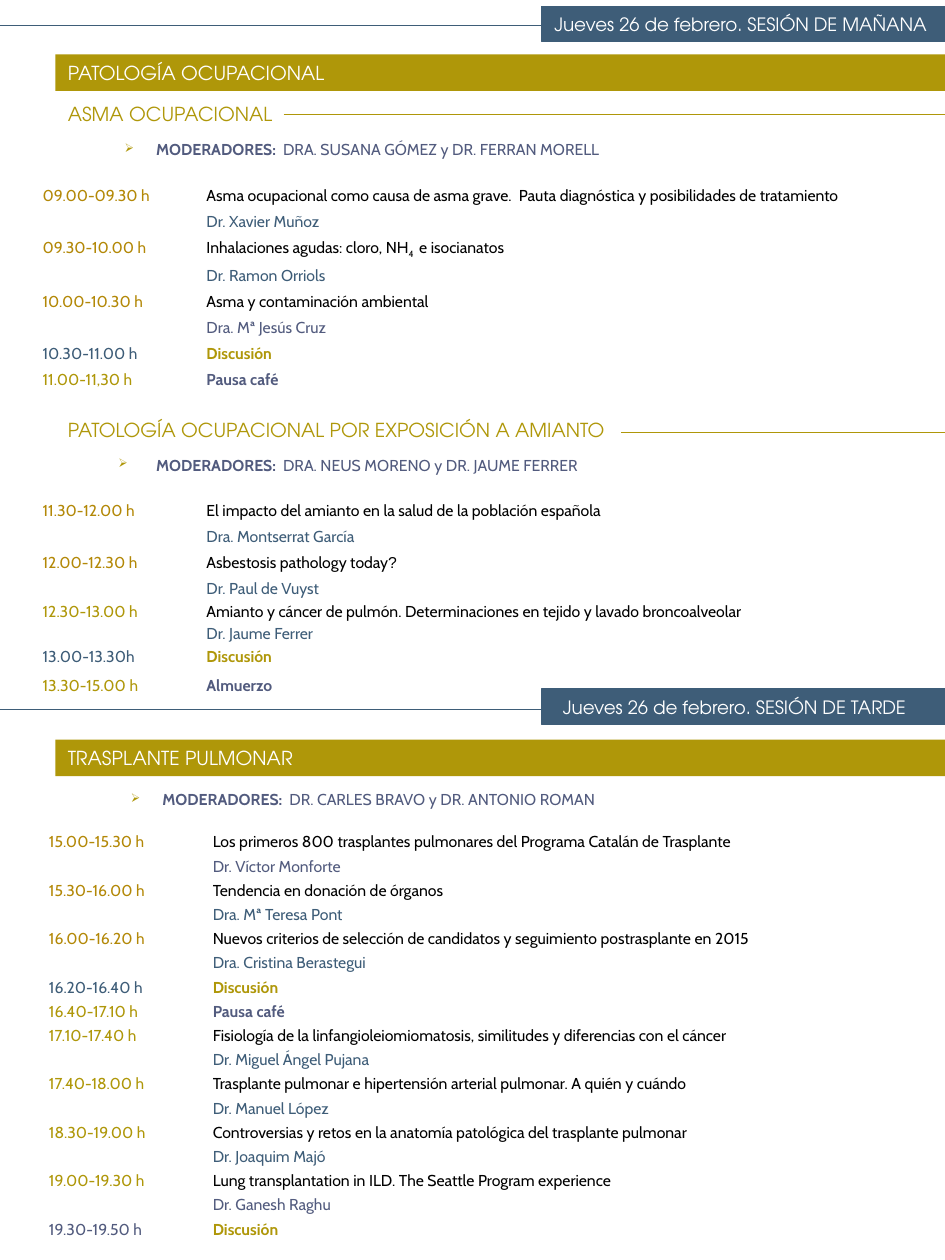
"""Build the conference programme page with its morning and afternoon sessions."""
from lxml.etree import SubElement
from pptx import Presentation
from pptx.dml.color import RGBColor
from pptx.enum.shapes import MSO_CONNECTOR, MSO_SHAPE
from pptx.enum.text import MSO_ANCHOR, PP_ALIGN
from pptx.oxml.ns import qn
from pptx.util import Pt

COLORS = {"olive": "AF9709", "gold": "B38807", "blue": "3E5D78",
          "violet": "525B7E", "black": "000000", "white": "FFFFFF"}
TITLE_FONT = "TeX Gyre Adventor"
BODY_FONT = "Cabin"


def add_run(paragraph, text, color="black", font=BODY_FONT, size=9, bold=False, baseline=0):
    run = paragraph.add_run()
    run.text = text
    run.font.name = font
    run.font.size = Pt(size)
    run.font.bold = bold
    run.font.color.rgb = RGBColor.from_string(COLORS[color])
    if baseline:
        run.font._element.set("baseline", str(baseline * 1000))


presentation = Presentation()
presentation.slide_width, presentation.slide_height = Pt(540), Pt(720)
slide = presentation.slides.add_slide(presentation.slide_layouts[6])

rules = [(0, 315.4, 14.4, "blue"), (0, 313.2, 405.4, "blue"),
         (162, 540, 65.5, "olive"), (355, 540, 247, "olive")]
for start, end, top, color in rules:
    line = slide.shapes.add_connector(MSO_CONNECTOR.STRAIGHT, Pt(start), Pt(top), Pt(end), Pt(top))
    line.line.color.rgb = RGBColor.from_string(COLORS[color])
    line.line.width = Pt(0.75)
    SubElement(line._element.spPr, qn("a:effectLst"))

session_bars = [("Jueves 26 de febrero. SESIÓN DE MAÑANA", 3.6, 10.2),
                ("Jueves 26 de febrero. SESIÓN DE TARDE", 393.8, 22.2)]
for text, top, right_margin in session_bars:
    shape = slide.shapes.add_shape(MSO_SHAPE.RECTANGLE, Pt(309.6), Pt(top), Pt(230.4), Pt(20.2))
    shape.shadow.inherit = False
    shape.fill.solid()
    shape.fill.fore_color.rgb = RGBColor.from_string(COLORS["blue"])
    shape.line.color.rgb = RGBColor.from_string(COLORS["blue"])
    shape.line.width = Pt(0.75)
    shape.text_frame.margin_right = Pt(right_margin)
    paragraph = shape.text_frame.paragraphs[0]
    paragraph.alignment = PP_ALIGN.RIGHT
    add_run(paragraph, text, color="white", font=TITLE_FONT, size=10.5)

headings = [("PATOLOGÍA OCUPACIONAL", 31, True),
            ("ASMA OCUPACIONAL", 54.7, False),
            ("PATOLOGÍA OCUPACIONAL POR EXPOSICIÓN A AMIANTO", 235.4, False),
            ("TRASPLANTE PULMONAR", 422.6, True)]
for text, top, filled in headings:
    width = 508.3 if filled else 493.2
    shape = slide.shapes.add_shape(MSO_SHAPE.RECTANGLE, Pt(31.7), Pt(top), Pt(width), Pt(20.9))
    shape.shadow.inherit = False
    shape.line.fill.background()
    if filled:
        shape.fill.solid()
        shape.fill.fore_color.rgb = RGBColor.from_string(COLORS["olive"])
    else:
        shape.fill.background()
    paragraph = shape.text_frame.paragraphs[0]
    paragraph.alignment = PP_ALIGN.LEFT
    add_run(paragraph, text, color="white" if filled else "olive", font=TITLE_FONT, size=11)

# Rows: time, time color, text (odd parts between bars are subscripts), text color, space before
BREAKS = ("Discusión", "Pausa café", "Almuerzo")
MODERATORS = "MODERADORES:  "
morning = [
    (MODERATORS, 18, "DRA. SUSANA GÓMEZ y DR. FERRAN MORELL", "violet", 4),
    ("09.00-09.30 h", "gold", "Asma ocupacional como causa de asma grave.  Pauta diagnóstica y posibilidades de tratamiento", "black", 15.3),
    ("", "blue", "Dr. Xavier Muñoz", "blue", 4),
    ("09.30-10.00 h", "gold", "Inhalaciones agudas: cloro, NH|4 | e isocianatos", "black", 4),
    ("", "blue", "Dr. Ramon Orriols", "blue", 4),
    ("10.00-10.30 h", "gold", "Asma y contaminación ambiental", "black", 4),
    ("", "blue", "Dra. Mª Jesús Cruz", "violet", 4),
    ("10.30-11.00 h", "blue", "Discusión", "olive", 4),
    ("11.00-11,30 h", "olive", "Pausa café", "violet", 4),
    (MODERATORS, 21.6, "DRA. NEUS MORENO y DR. JAUME FERRER", "violet", 38.2),
    ("11.30-12.00 h", "gold", "El impacto del amianto en la salud de la población española", "black", 15.3),
    ("", "blue", "Dra. Montserrat García", "blue", 4),
    ("12.00-12.30 h", "gold", "Asbestosis pathology today||?", "black", 4),
    ("", "blue", "Dr. Paul de Vuyst", "blue", 4),
    ("12.30-13.00 h", "olive", "Amianto y cáncer de pulmón. Determinaciones en tejido y lavado broncoalveolar", "black", 2),
    ("", "blue", "Dr. Jaume Ferrer", "blue", 2),
    ("13.00-13.30h", "blue", "Discusión", "olive", 2),
    ("13.30-15.00 h", "olive", "Almuerzo", "violet", 6),
]
afternoon = [
    (MODERATORS, 18, "DR. CARLES BRAVO y DR. ANTONIO ROMAN", "violet", 3),
    ("15.00-15.30 h", "gold", "Los primeros 800 trasplantes pulmonares del Programa Catalán de Trasplante", "black", 13.3),
    ("", "blue", "Dr. Víctor Monforte", "violet", 3),
    ("15.30-16.00 h", "gold", "Tendencia en donación de órganos", "black", 3),
    ("", "blue", "Dra. Mª Teresa Pont", "blue", 3),
    ("16.00-16.20 h", "gold", "Nuevos criterios de selección de candidatos y seguimiento postrasplante en 2015", "black", 3),
    ("", "blue", "Dra. Cristina Berastegui", "blue", 3),
    ("16.20-16.40 h", "blue", "Discusión", "olive", 3),
    ("16.40-17.10 h", "olive", "Pausa café", "violet", 3),
    ("17.10-17.40 h", "olive", "Fisiología de la linfangioleiomiomatosis, similitudes y diferencias con el cáncer", "black", 3),
    ("", "blue", "Dr. Miguel Ángel Pujana", "blue", 3),
    ("17.40-18.00 h", "olive", "Trasplante pulmonar e hipertensión arterial pulmonar. A quién y cuándo", "black", 3),
    ("", "blue", "Dr. Manuel López", "blue", 3),
    ("18.30-19.00 h", "olive", "Controversias y retos en la anatomía patológica del trasplante pulmonar", "black", 3),
    ("", "blue", "Dr. Joaquim Majó", "blue", 3),
    ("19.00-19.30 h", "olive", "Lung transplantation in ILD. The Seattle Program experience", "black", 3),
    ("", "blue", "Dr. Ganesh Raghu", "violet", 3),
    ("19.30-19.50 h", "violet", "Discusión", "olive", 3),
]
for rows, left, top, height in [(morning, 17.3, 76.3, 380.2), (afternoon, 20.9, 447.8, 275)]:
    frame = slide.shapes.add_textbox(Pt(left), Pt(top), Pt(519.1), Pt(height)).text_frame
    frame.word_wrap = True
    frame.vertical_anchor = MSO_ANCHOR.TOP
    for index, (label, label_style, text, color, space_before) in enumerate(rows):
        paragraph = frame.paragraphs[0] if index == 0 else frame.add_paragraph()
        paragraph.space_before = Pt(space_before)
        properties = paragraph._p.get_or_add_pPr()
        if label == MODERATORS:
            properties.set("marL", str(Pt(64.8)))
            properties.set("indent", str(-Pt(label_style)))
            bullet_color = SubElement(properties, qn("a:buClr"))
            SubElement(bullet_color, qn("a:srgbClr"), val=COLORS["olive"])
            SubElement(properties, qn("a:buSzPct"), val="76000")
            SubElement(properties, qn("a:buChar"), char="➢")
            add_run(paragraph, label, color=color, bold=True)
        else:
            tabs = SubElement(properties, qn("a:tabLst"))
            SubElement(tabs, qn("a:tab"), pos=str(Pt(93.6)), algn="l")
            add_run(paragraph, label + "\t", color=label_style)
        for position, part in enumerate(text.split("|")):
            if part:
                add_run(paragraph, part, color=color, font="Arial" if part == "?" else BODY_FONT,
                        bold=text in BREAKS, baseline=-25 * (position % 2))

presentation.save("out.pptx")
